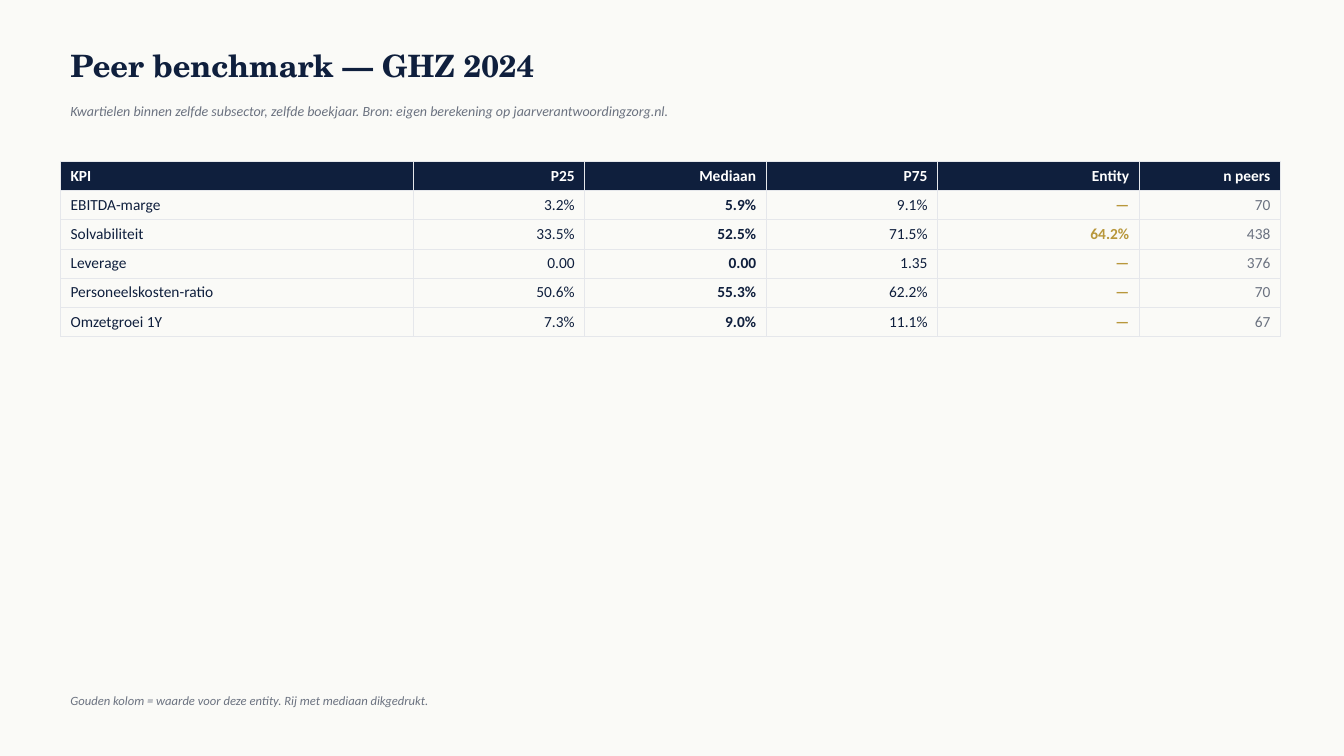
from lxml.etree import SubElement
from pptx import Presentation
from pptx.dml.color import RGBColor
from pptx.enum.text import MSO_ANCHOR as Anchor, PP_ALIGN as Align
from pptx.oxml.ns import qn
from pptx.util import Inches, Pt

NAVY = RGBColor(0x0F, 0x1F, 0x3D)
GOLD = RGBColor(0xB8, 0x97, 0x3B)
GRAY = RGBColor(0x6B, 0x72, 0x80)
WHITE = RGBColor(0xFF, 0xFF, 0xFF)
BORDER = RGBColor(0xE5, 0xE7, 0xEB)
PAPER = RGBColor(0xFA, 0xFA, 0xF7)

TITLE_FONT = "TeX Gyre Schola"
BODY_FONT = "Calibri"

LEFT = 0.6
ROW_HEIGHT = 0.29
# Heading, width in inches, body colour, body bold
COLUMNS = [
    ("KPI", 3.5, NAVY, False),
    ("P25", 1.7, NAVY, False),
    ("Mediaan", 1.8, NAVY, True),
    ("P75", 1.7, NAVY, False),
    ("Entity", 2.0, GOLD, True),
    ("n peers", 1.4, GRAY, False),
]
BENCHMARKS = [
    ("EBITDA-marge", "3.2%", "5.9%", "9.1%", "—", "70"),
    ("Solvabiliteit", "33.5%", "52.5%", "71.5%", "64.2%", "438"),
    ("Leverage", "0.00", "0.00", "1.35", "—", "376"),
    ("Personeelskosten-ratio", "50.6%", "55.3%", "62.2%", "—", "70"),
    ("Omzetgroei 1Y", "7.3%", "9.0%", "11.1%", "—", "67"),
]


def write_text(text_frame, text, size, color, font=BODY_FONT, bold=False, italic=False):
    text_frame.text = text
    run_font = text_frame.paragraphs[0].runs[0].font
    run_font.name = font
    run_font.size = Pt(size)
    run_font.bold = bold
    run_font.italic = italic
    run_font.color.rgb = color


def add_text(slide, top, height, text, size, color, **style):
    box = slide.shapes.add_textbox(Inches(LEFT), Inches(top), Inches(12), Inches(height))
    box.text_frame.word_wrap = True
    box.text_frame.vertical_anchor = Anchor.MIDDLE
    write_text(box.text_frame, text, size, color, **style)


def add_borders(cell):
    properties = cell._tc.get_or_add_tcPr()
    for side in ("a:lnL", "a:lnR", "a:lnT", "a:lnB"):
        line = SubElement(properties, qn(side), w=str(Pt(0.5)))
        fill = SubElement(line, qn("a:solidFill"))
        SubElement(fill, qn("a:srgbClr"), val=str(BORDER))


def format_cell(cell, text, color, bold, is_header, is_label):
    write_text(cell.text_frame, text, 11, color, bold=bold)
    cell.text_frame.paragraphs[0].alignment = Align.LEFT if is_label else Align.RIGHT
    add_borders(cell)
    if is_header:
        cell.fill.solid()
        cell.fill.fore_color.rgb = NAVY
    else:
        cell.fill.background()


def add_benchmark_table(slide):
    row_count = len(BENCHMARKS) + 1
    table_width = sum(width for _, width, _, _ in COLUMNS)
    table = slide.shapes.add_table(
        row_count, len(COLUMNS), Inches(LEFT), Inches(1.6),
        Inches(table_width), Inches(ROW_HEIGHT * row_count),
    ).table
    table.horz_banding = False
    for row in table.rows:
        row.height = Inches(ROW_HEIGHT)
    for column, (heading, width, color, bold) in enumerate(COLUMNS):
        table.columns[column].width = Inches(width)
        is_label = column == 0
        format_cell(table.cell(0, column), heading, WHITE, True, True, is_label)
        for row, values in enumerate(BENCHMARKS, start=1):
            format_cell(table.cell(row, column), values[column], color, bold, False, is_label)


def main():
    presentation = Presentation()
    presentation.slide_width = Inches(13.33)
    presentation.slide_height = Inches(7.5)
    slide = presentation.slides.add_slide(presentation.slide_layouts[6])
    slide.background.fill.solid()
    slide.background.fill.fore_color.rgb = PAPER

    add_text(slide, 0.4, 0.5, "Peer benchmark — GHZ 2024", 22, NAVY, font=TITLE_FONT, bold=True)
    add_text(
        slide, 0.95, 0.3,
        "Kwartielen binnen zelfde subsector, zelfde boekjaar. "
        "Bron: eigen berekening op jaarverantwoordingzorg.nl.",
        10, GRAY, italic=True,
    )
    add_benchmark_table(slide)
    add_text(
        slide, 6.8, 0.3,
        "Gouden kolom = waarde voor deze entity. Rij met mediaan dikgedrukt.",
        9, GRAY, italic=True,
    )
    presentation.save("out.pptx")


if __name__ == "__main__":
    main()
